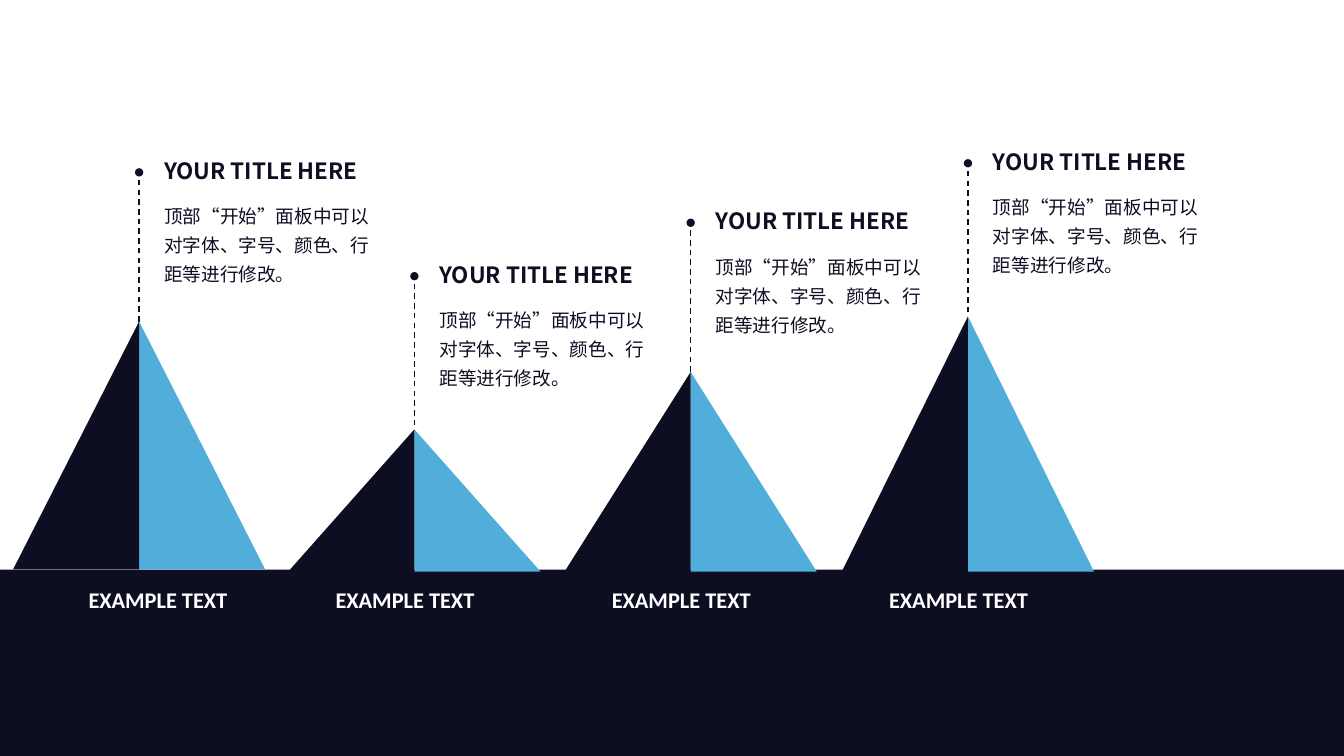
from dataclasses import dataclass

from lxml import etree
from pptx import Presentation
from pptx.dml.color import RGBColor
from pptx.enum.dml import MSO_LINE
from pptx.enum.shapes import MSO_CONNECTOR, MSO_SHAPE
from pptx.enum.text import MSO_AUTO_SIZE
from pptx.oxml.ns import qn
from pptx.util import Inches, Pt

RECT = MSO_SHAPE.RECTANGLE
WEDGE = MSO_SHAPE.RIGHT_TRIANGLE
STRAIGHT = MSO_CONNECTOR.STRAIGHT
DASH = MSO_LINE.DASH
GROW = MSO_AUTO_SIZE.SHAPE_TO_FIT_TEXT

COLORS = {"navy": "0E0E23", "blue": "51ADD9", "white": "FFFFFF"}
LATIN = "Calibri"
HAN = "Noto Sans CJK SC"
TITLE = "YOUR TITLE HERE"
BODY = "顶部“开始”面板中可以对字体、字号、颜色、行距等进行修改。"
LABEL = "EXAMPLE TEXT"

WIDE, HIGH = 13.33, 7.5
GROUND = 5.65
HALF = 1.25    # width of one side of a mountain
STEM = 1.48    # length of a dashed line


@dataclass
class Peak:
    x: float
    top: float
    base: float
    dot: float
    label: float


@dataclass
class Style:
    font: str
    size: float
    color: str
    bold: bool = False
    wrap: bool = False
    spacing: float = 1.0


PEAKS = [
    Peak(1.38, 3.19, 5.65, 1.71, 0.78),
    Peak(4.11, 4.26, 5.67, 2.74, 3.23),
    Peak(6.85, 3.69, 5.67, 2.21, 5.97),
    Peak(9.6, 3.14, 5.67, 1.62, 8.72),
]
HEAD = Style(HAN, 16, "navy", bold=True)
NOTE = Style(HAN, 13.3, "navy", wrap=True, spacing=1.3)
FOOT = Style(LATIN, 16, "white", bold=True)


def rgb(name: str) -> RGBColor:
    return RGBColor.from_string(COLORS[name])


def add_block(shapes, kind, x: float, y: float, w: float, h: float, color: str):
    block = shapes.add_shape(kind, Inches(x), Inches(y), Inches(w), Inches(h))
    block.shadow.inherit = False
    block.fill.solid()
    block.fill.fore_color.rgb = rgb(color)
    block.line.fill.background()
    return block


def add_text(shapes, text: str, x: float, y: float, w: float, h: float, style: Style) -> None:
    frame = shapes.add_textbox(Inches(x), Inches(y), Inches(w), Inches(h)).text_frame
    frame.word_wrap = style.wrap
    frame.auto_size = GROW
    para = frame.paragraphs[0]
    para.text = text
    para.line_spacing = style.spacing
    font = para.font
    font.name = style.font
    font.size = Pt(style.size)
    font.bold = style.bold
    font.color.rgb = rgb(style.color)
    # East Asian glyphs take their font from a:ea
    props = para._p.pPr.find(qn("a:defRPr"))
    etree.SubElement(props, qn("a:ea")).set("typeface", style.font)


def add_stem(shapes, x: float, dot: float) -> None:
    """Draw a dashed line upwards that ends in a round dot."""
    stem = shapes.add_connector(
        STRAIGHT, Inches(x), Inches(dot + STEM), Inches(x), Inches(dot))
    stem.line.color.rgb = rgb("navy")
    stem.line.width = Pt(1)
    stem.line.dash_style = DASH
    props = stem.element.spPr
    etree.SubElement(props.find(qn("a:ln")), qn("a:tailEnd")).set("type", "oval")
    etree.SubElement(props, qn("a:effectLst"))


def add_mount(shapes, peak: Peak) -> None:
    sides = shapes.add_group_shape().shapes
    high = peak.base - peak.top
    add_block(sides, WEDGE, peak.x, peak.top, HALF, high, "blue")
    dark = add_block(sides, WEDGE, peak.x - HALF, peak.top, HALF, high, "navy")
    dark.element.spPr.find(qn("a:xfrm")).set("flipH", "1")


def main() -> None:
    deck = Presentation()
    deck.slide_width, deck.slide_height = Inches(WIDE), Inches(HIGH)
    shapes = deck.slides.add_slide(deck.slide_layouts[6]).shapes

    add_block(shapes, RECT, 0, GROUND, WIDE, HIGH - GROUND, "navy")
    for peak in PEAKS:
        left = peak.x + 0.15
        add_text(shapes, LABEL, peak.label, 5.77, 1.6, 0.37, FOOT)
        add_stem(shapes, peak.x, peak.dot)
        add_text(shapes, TITLE, left, peak.dot - 0.2, 2.19, 0.37, HEAD)
        add_text(shapes, BODY, left, peak.dot + 0.21, 2.28, 0.98, NOTE)
        add_mount(shapes, peak)

    deck.save("out.pptx")


if __name__ == "__main__":
    main()
